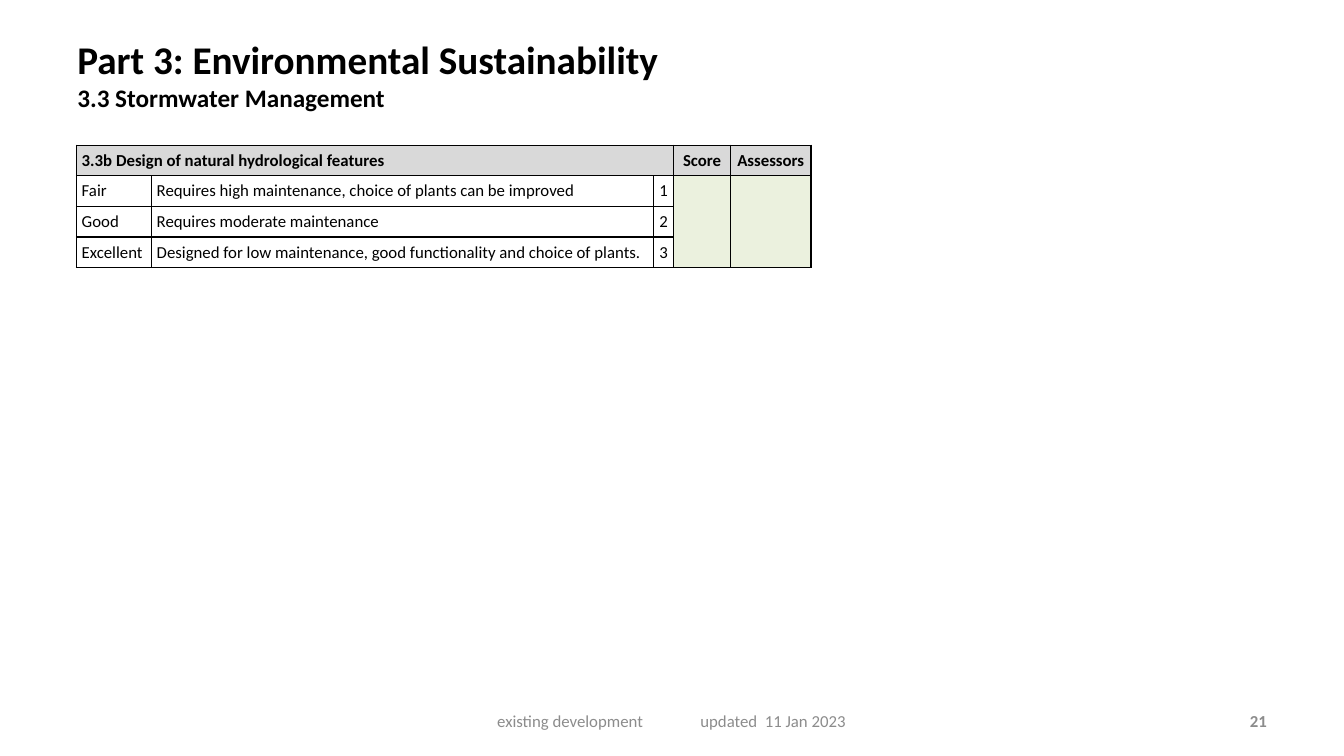
from dataclasses import dataclass

from lxml import etree
from pptx import Presentation
from pptx.dml.color import RGBColor
from pptx.enum.text import MSO_ANCHOR, PP_ALIGN
from pptx.oxml.ns import qn
from pptx.util import Cm, Pt

LEFT, CENTER, RIGHT = PP_ALIGN.LEFT, PP_ALIGN.CENTER, PP_ALIGN.RIGHT
TOP, MIDDLE = MSO_ANCHOR.TOP, MSO_ANCHOR.MIDDLE


@dataclass(frozen=True)
class Theme:
    font: str = "Calibri"
    ink: str = "000000"
    muted: str = "8C8C8C"
    header_fill: str = "D9D9D9"
    entry_fill: str = "EBF1DE"
    title_size: int = 28
    subtitle_size: int = 18
    body_size: int = 12
    border_width: float = 1
    cell_margin: float = 0.13


THEME = Theme()


def write(paragraph, text, size=THEME.body_size, color=THEME.ink, bold=False,
          align=LEFT, tab=None):
    """Fill a paragraph; tab is the position of a left tab stop in cm."""
    paragraph.alignment = align
    if tab:
        stops = etree.SubElement(paragraph._p.get_or_add_pPr(), qn("a:tabLst"))
        etree.SubElement(stops, qn("a:tab"), pos=str(Cm(tab)), algn="l")
    if not text:
        # An empty cell would otherwise be as tall as the default type size.
        etree.SubElement(paragraph._p, qn("a:endParaRPr"), sz=str(size * 100))
        return
    run = paragraph.add_run()
    run.text = text
    run.font.name = THEME.font
    run.font.size = Pt(size)
    run.font.bold = bold
    run.font.color.rgb = RGBColor.from_string(color)


class SlideBuilder:
    def __init__(self, slide, theme):
        self.slide = slide
        self.theme = theme

    def text(self, left, top, width, height, lines, anchor=MIDDLE, inset=0.25):
        """Add a box; each line is a text and its format."""
        box = self.slide.shapes.add_textbox(Cm(left), Cm(top), Cm(width), Cm(height))
        frame = box.text_frame
        frame.word_wrap = True
        frame.vertical_anchor = anchor
        frame.margin_left = Cm(inset)
        for index, (line, style) in enumerate(lines):
            paragraph = frame.add_paragraph() if index else frame.paragraphs[0]
            write(paragraph, line, **style)

    def border(self, cell):
        properties = cell._tc.get_or_add_tcPr()
        for index, side in enumerate(("lnL", "lnR", "lnT", "lnB")):
            line = etree.Element(qn(f"a:{side}"), w=str(Pt(self.theme.border_width)))
            fill = etree.SubElement(line, qn("a:solidFill"))
            etree.SubElement(fill, qn("a:srgbClr"), val=self.theme.ink)
            properties.insert(index, line)

    def cell(self, cell, text, fill=None, **style):
        cell.vertical_anchor = MIDDLE
        margin = Cm(self.theme.cell_margin)
        cell.margin_left = cell.margin_right = margin
        cell.margin_top = cell.margin_bottom = margin
        if fill:
            cell.fill.solid()
            cell.fill.fore_color.rgb = RGBColor.from_string(fill)
        else:
            cell.fill.background()
        self.border(cell)
        write(cell.text_frame.paragraphs[0], text, **style)

    def score_table(self, left, top, widths, row_height, heading, entries, ratings):
        """Add rated rows beside entry columns that are merged downwards."""
        columns, rows = len(widths), len(ratings) + 1
        first_entry = columns - len(entries)
        table = self.slide.shapes.add_table(
            rows, columns, Cm(left), Cm(top), Cm(sum(widths)), Cm(rows * row_height)
        ).table
        table.first_row = table.horz_banding = False
        for column, width in zip(table.columns, widths):
            column.width = Cm(width)
        for row in table.rows:
            row.height = Cm(row_height)

        header = [heading] + [""] * (first_entry - 1) + entries
        for c, label in enumerate(header):
            self.cell(table.cell(0, c), label, self.theme.header_fill, bold=True,
                      align=CENTER if c >= first_entry else LEFT)
        for r, rating in enumerate(ratings, start=1):
            for c, value in enumerate(rating):
                self.cell(table.cell(r, c), value,
                          align=CENTER if c == first_entry - 1 else LEFT)
            for c in range(first_entry, columns):
                self.cell(table.cell(r, c), "", self.theme.entry_fill)

        table.cell(0, 0).merge(table.cell(0, first_entry - 1))
        for c in range(first_entry, columns):
            table.cell(1, c).merge(table.cell(rows - 1, c))


def main():
    presentation = Presentation()
    presentation.slide_width, presentation.slide_height = Cm(33.87), Cm(19.05)
    slide = presentation.slides.add_slide(presentation.slide_layouts[6])
    builder = SlideBuilder(slide, THEME)

    builder.text(1.7, 0.76, 26.31, 2.51, [
        ("Part 3: Environmental Sustainability", {"size": THEME.title_size, "bold": True}),
        ("3.3 Stormwater Management", {"size": THEME.subtitle_size, "bold": True}),
    ], anchor=TOP)

    builder.score_table(
        1.93, 3.66, [1.89, 12.65, 0.51, 1.43, 2.03], 0.77,
        "3.3b Design of natural hydrological features",
        ["Score", "Assessors"],
        [
            ("Fair", "Requires high maintenance, choice of plants can be improved", "1"),
            ("Good", "Requires moderate maintenance", "2"),
            ("Excellent", "Designed for low maintenance, good functionality and "
                          "choice of plants.", "3"),
        ])

    footer_top, footer_height = 17.65, 1.02
    builder.text(11.58, footer_top, 10.72, footer_height, [
        ("existing development\tupdated  11 Jan 2023", {"color": THEME.muted, "tab": 5.12}),
    ], inset=0.95)
    builder.text(24.28, footer_top, 7.9, footer_height, [
        ("21", {"color": THEME.muted, "bold": True, "align": RIGHT}),
    ])

    presentation.save("out.pptx")


if __name__ == "__main__":
    main()
